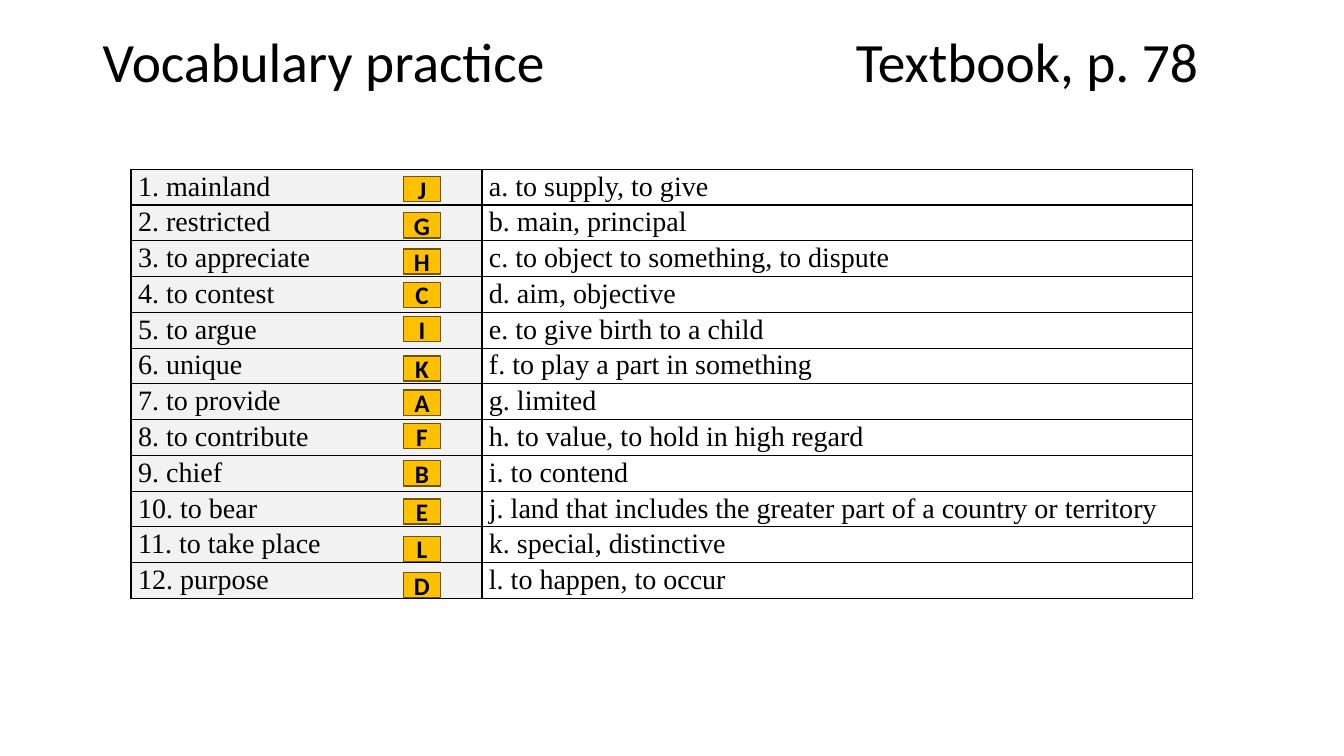
import pptx
import pptx.dml.color
import pptx.enum.shapes
import pptx.enum.text
import pptx.oxml
import pptx.oxml.ns
import pptx.util
from pptx.util import Inches

ANSWER_ROWS = [
    ("1. mainland", "a. to supply, to give", "J", 1.75),
    ("2. restricted", "b. main, principal", "G", 2.11),
    ("3. to appreciate", "c. to object to something, to dispute", "H", 2.47),
    ("4. to contest", "d. aim, objective", "C", 2.8),
    ("5. to argue", "e. to give birth to a child", "I", 3.14),
    ("6. unique", "f. to play a part in something", "K", 3.53),
    ("7. to provide", "g. limited", "A", 3.87),
    ("8. to contribute", "h. to value, to hold in high regard", "F", 4.2),
    ("9. chief", "i. to contend", "B", 4.57),
    ("10. to bear", "j. land that includes the greater part of a country or territory", "E", 4.95),
    ("11. to take place", "k. special, distinctive", "L", 5.32),
    ("12. purpose", "l. to happen, to occur", "D", 5.68),
]
TITLE = {"name": "Calibri", "size": pptx.util.Pt(39.6)}
ENTRY = {"name": "Times New Roman", "size": pptx.util.Pt(20)}
LETTER = {"name": "Calibri", "size": pptx.util.Pt(18), "bold": True}
NAMESPACE = pptx.oxml.ns.nsdecls("a")


def color(value):
    return pptx.dml.color.RGBColor.from_string(value)


def write(frame, text, font_format, line_spacing=1.0):
    para = frame.paragraphs[0]
    para.line_spacing = line_spacing
    span = para.add_run()
    span.text = text
    for name, value in font_format.items():
        setattr(span.font, name, value)
    span.font.color.rgb = color("000000")
    return para


deck = pptx.Presentation()
deck.slide_width, deck.slide_height = Inches(13.33), Inches(7.5)
page = deck.slides.add_slide(deck.slide_layouts[6])

# Title, with the page reference at a tab stop
box = page.shapes.add_textbox(Inches(0.92), Inches(0.4), Inches(11.5), Inches(0.48))
box.text_frame.word_wrap = True
box.text_frame.vertical_anchor = pptx.enum.text.MSO_ANCHOR.MIDDLE
para = write(box.text_frame, "Vocabulary practice\tTextbook, p. 78", TITLE, 0.9)
para._p.get_or_add_pPr().append(pptx.oxml.parse_xml(
    f'<a:tabLst {NAMESPACE}><a:tab pos="{Inches(7.47)}" algn="l"/></a:tabLst>'))

# Vocabulary table
table = page.shapes.add_table(
    len(ANSWER_ROWS), 2, Inches(1.3), Inches(1.68), Inches(10.53), Inches(4.26)).table
table.columns[0].width, table.columns[1].width = Inches(3.48), Inches(7.05)
for row, (term, meaning, _, _) in enumerate(ANSWER_ROWS):
    for column, (text, fill) in enumerate([(term, "F2F2F2"), (meaning, "FFFFFF")]):
        cell = table.cell(row, column)
        cell.margin_left = cell.margin_right = Inches(0.07)
        cell.margin_top = cell.margin_bottom = 0
        write(cell.text_frame, text, ENTRY, 1.06)
        cell_properties = cell._tc.get_or_add_tcPr()
        for side in ("lnL", "lnR", "lnT", "lnB"):
            cell_properties.append(pptx.oxml.parse_xml(
                f'<a:{side} {NAMESPACE} w="{pptx.util.Pt(1)}"><a:solidFill>'
                f'<a:srgbClr val="000000"/></a:solidFill></a:{side}>'))
        cell.fill.solid()
        cell.fill.fore_color.rgb = color(fill)

# Answer letters
for _, _, letter, top in ANSWER_ROWS:
    badge = page.shapes.add_shape(
        pptx.enum.shapes.MSO_SHAPE.RECTANGLE,
        Inches(4), Inches(top), Inches(0.37), Inches(0.25))
    badge.shadow.inherit = False
    badge.fill.solid()
    badge.fill.fore_color.rgb = color("FFC000")
    badge.line.color.rgb = color("705400")
    badge.line.width = pptx.util.Pt(1)
    badge.text_frame.vertical_anchor = pptx.enum.text.MSO_ANCHOR.MIDDLE
    para = write(badge.text_frame, letter, LETTER)
    para.alignment = pptx.enum.text.PP_ALIGN.CENTER

deck.save("out.pptx")
